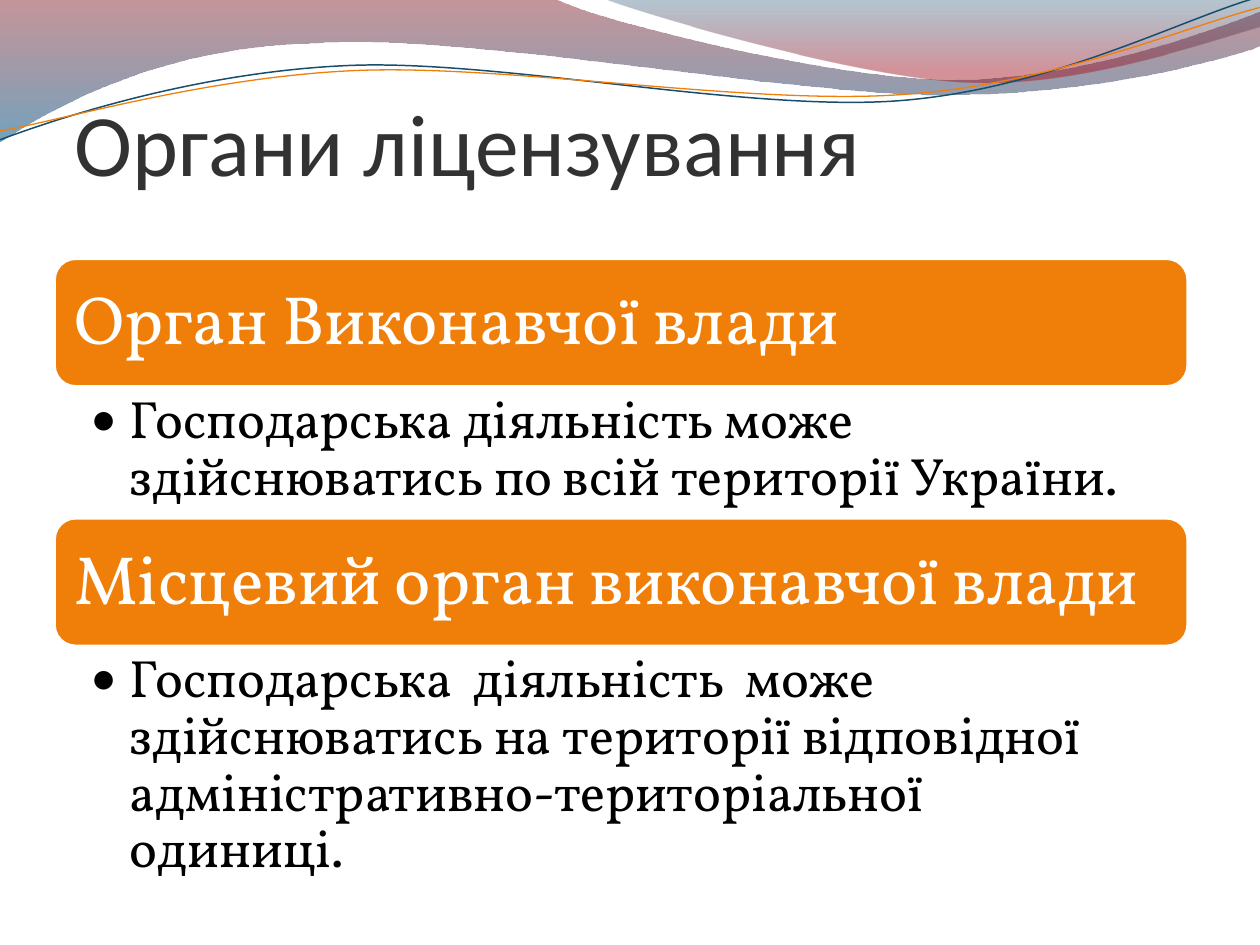
from dataclasses import dataclass
from math import cos, radians, sin

from lxml import etree
from pptx import Presentation
from pptx.dml.color import RGBColor
from pptx.enum.shapes import MSO_SHAPE
from pptx.enum.text import MSO_ANCHOR, PP_ALIGN
from pptx.oxml.ns import qn
from pptx.util import Inches, Pt

ROUNDED = MSO_SHAPE.ROUNDED_RECTANGLE
TOP, MIDDLE, BOTTOM = MSO_ANCHOR.TOP, MSO_ANCHOR.MIDDLE, MSO_ANCHOR.BOTTOM
LEFT = PP_ALIGN.LEFT

ORANGE = RGBColor(0xF0, 0x7F, 0x09)
NAVY = RGBColor(0x18, 0x4E, 0x6D)
WINE = RGBColor(0x7E, 0x16, 0x21)
BLUE = RGBColor(0x00, 0x56, 0x89)
DEEP_BLUE = RGBColor(0x09, 0x44, 0x67)
RED = RGBColor(0xA1, 0x0F, 0x1F)
CHARCOAL = RGBColor(0x32, 0x32, 0x32)
WHITE = RGBColor(0xFF, 0xFF, 0xFF)
BLACK = RGBColor(0x00, 0x00, 0x00)

TITLE_FONT, BODY_FONT = "Calibri", "Vollkorn"
LINE_TILT = -2.7  # degrees
BLOCK_LEFT, BLOCK_WIDTH, HEADING_HEIGHT = 0.43, 9, 1.02

Point = tuple[float, float]


@dataclass
class GradientStop:
    position: float
    color: RGBColor
    opacity: int  # percent


@dataclass
class Band:
    """Points and, for each step between them, C (curve) or L (line)."""
    points: list[Point]
    steps: str
    stops: list[GradientStop]


@dataclass
class WaveLine:
    points: list[Point]
    color: RGBColor
    width: float


@dataclass
class Block:
    top: float
    heading: str
    detail: str
    detail_height: float


BANDS = [
    Band([(0, 0), (4.4, -0.01),
          (4.76, 0.17), (6.64, 0.63), (7.58, 0.63),
          (8.53, 0.63), (9.58, 0.26), (10, 0.09), (10.01, 0.36),
          (9.83, 0.44), (8.7, 0.76), (7.46, 0.75),
          (6.22, 0.75), (3.82, 0.28), (2.57, 0.34),
          (1.29, 0.36), (0.46, 0.83), (-0.01, 1.13)],
         "LCCLCCC", [GradientStop(0, WINE, 45), GradientStop(1, BLUE, 55)]),
    Band([(4.79, -0.01), (5.09, 0.11), (6.82, 0.62), (7.69, 0.65),
          (8.56, 0.69), (9.61, 0.32), (10, 0.21), (10, 0)],
         "CCL", [GradientStop(0, DEEP_BLUE, 30), GradientStop(0.8, RED, 45)]),
]

WAVE_LINES = [
    WaveLine([(0, 1.11), (0.48, 0.93), (1.58, 0.57), (2.77, 0.52),
              (3.95, 0.47), (5.93, 0.89), (7.13, 0.8),
              (8.33, 0.71), (9.38, 0.15), (9.98, -0.02)], NAVY, 0.85),
    WaveLine([(0, 1.04), (0.47, 0.96), (1.64, 0.61), (2.83, 0.56),
              (4.03, 0.51), (5.97, 0.84), (7.17, 0.75),
              (8.36, 0.67), (9.41, 0.21), (10, 0.06)], ORANGE, 0.75),
]

BLOCKS = [
    Block(2.05, "Орган Виконавчої влади",
          "Господарська діяльність може здійснюватись по всій території України.",
          1.04),
    Block(4.11, "Місцевий орган виконавчої влади",
          "Господарська  діяльність  може здійснюватись на території відповідної "
          "адміністративно-територіальної одиниці.", 1.5),
]


def turn(point: Point, degrees: float) -> Point:
    """Turn a point clockwise about the page corner."""
    x, y = point
    angle = radians(degrees)
    return x * cos(angle) - y * sin(angle), x * sin(angle) + y * cos(angle)


def draw_curve(page, points: list[Point], steps: str, close: bool):
    """Build an outline, then join three line steps into each cubic curve."""
    places = [(Inches(x), Inches(y)) for x, y in points]
    builder = page.shapes.build_freeform(*places[0])
    builder.add_line_segments(places[1:], close=close)
    shape = builder.convert_to_shape()
    shape.shadow.inherit = False
    lines = iter(list(shape._element.spPr.iter(qn("a:lnTo"))))
    for step in steps:
        first = next(lines)
        if step == "C":
            first.tag = qn("a:cubicBezTo")
            for line in (next(lines), next(lines)):
                first.append(line[0])
                line.getparent().remove(line)
    return shape


def draw_band(page, band: Band) -> None:
    shape = draw_curve(page, band.points, band.steps, close=True)
    shape.line.fill.background()
    shape.fill.gradient()
    shape.fill.gradient_angle = 270  # top to bottom
    for target, stop in zip(shape.fill.gradient_stops, band.stops):
        target.position = stop.position
        target.color.rgb = stop.color
    for color, stop in zip(shape._element.spPr.iter(qn("a:srgbClr")), band.stops):
        etree.SubElement(color, qn("a:alpha")).set("val", str(stop.opacity * 1000))


def draw_wave_line(page, wave: WaveLine) -> None:
    level = [turn(point, -LINE_TILT) for point in wave.points]
    shape = draw_curve(page, level, "CCC", close=False)
    shape.fill.background()
    shape.line.color.rgb = wave.color
    shape.line.width = Pt(wave.width)
    # Tilt about the page corner rather than the middle of the shape
    half_width, half_height = shape.width / 2, shape.height / 2
    x, y = turn((shape.left + half_width, shape.top + half_height), LINE_TILT)
    shape.left, shape.top = round(x - half_width), round(y - half_height)
    shape.rotation = LINE_TILT


def set_text(box, text: str, font: str, size: float, color: RGBColor,
             anchor, insets: tuple[float, float, float, float]):
    """Fill a box with one left-aligned paragraph and return it."""
    frame = box.text_frame
    frame.text = text
    frame.word_wrap = True
    frame.vertical_anchor = anchor
    (frame.margin_left, frame.margin_top,
     frame.margin_right, frame.margin_bottom) = map(Inches, insets)
    para = frame.paragraphs[0]
    para.alignment = LEFT
    span = para.runs[0]
    span.font.name, span.font.size = font, Pt(size)
    span.font.color.rgb = color
    return para


def add_bullet(para) -> None:
    properties = para._p.get_or_add_pPr()
    properties.set("marL", str(Inches(0.31)))
    properties.set("indent", str(-Inches(0.31)))
    etree.SubElement(properties, qn("a:buFont")).set("typeface", TITLE_FONT)
    etree.SubElement(properties, qn("a:buChar")).set("char", "•")


def draw_block(page, block: Block) -> None:
    left, width = Inches(BLOCK_LEFT), Inches(BLOCK_WIDTH)
    bar = page.shapes.add_shape(ROUNDED, left, Inches(block.top),
                                width, Inches(HEADING_HEIGHT))
    bar.shadow.inherit = False
    bar.fill.solid()
    bar.fill.fore_color.rgb = ORANGE
    bar.line.color.rgb = WHITE
    bar.line.width = Pt(2)
    para = set_text(bar, block.heading, BODY_FONT, 39, WHITE, MIDDLE, (0.11,) * 4)
    para.line_spacing = 0.9

    box = page.shapes.add_textbox(left, Inches(block.top + HEADING_HEIGHT),
                                  width, Inches(block.detail_height))
    para = set_text(box, block.detail, BODY_FONT, 30, BLACK, TOP,
                    (0.29, 0.05, 0.36, 0.05))
    para.level = 1
    para.line_spacing = 0.9
    add_bullet(para)


def main() -> None:
    deck = Presentation()
    deck.slide_width, deck.slide_height = Inches(10), Inches(7.5)
    page = deck.slides.add_slide(deck.slide_layouts[5])

    # Waves along the top
    for band in BANDS:
        draw_band(page, band)
    for wave in WAVE_LINES:
        draw_wave_line(page, wave)

    # Title, in front of the waves
    title = page.shapes.title
    title.left, title.top = Inches(0.59), Inches(0.29)
    title.width, title.height = Inches(9), Inches(1.25)
    set_text(title, "Органи ліцензування", TITLE_FONT, 50, CHARCOAL, BOTTOM,
             (0, 0.05, 0, 0))
    page.shapes._spTree.append(title._element)

    # Licensing bodies
    for block in BLOCKS:
        draw_block(page, block)

    deck.save("out.pptx")


if __name__ == "__main__":
    main()
